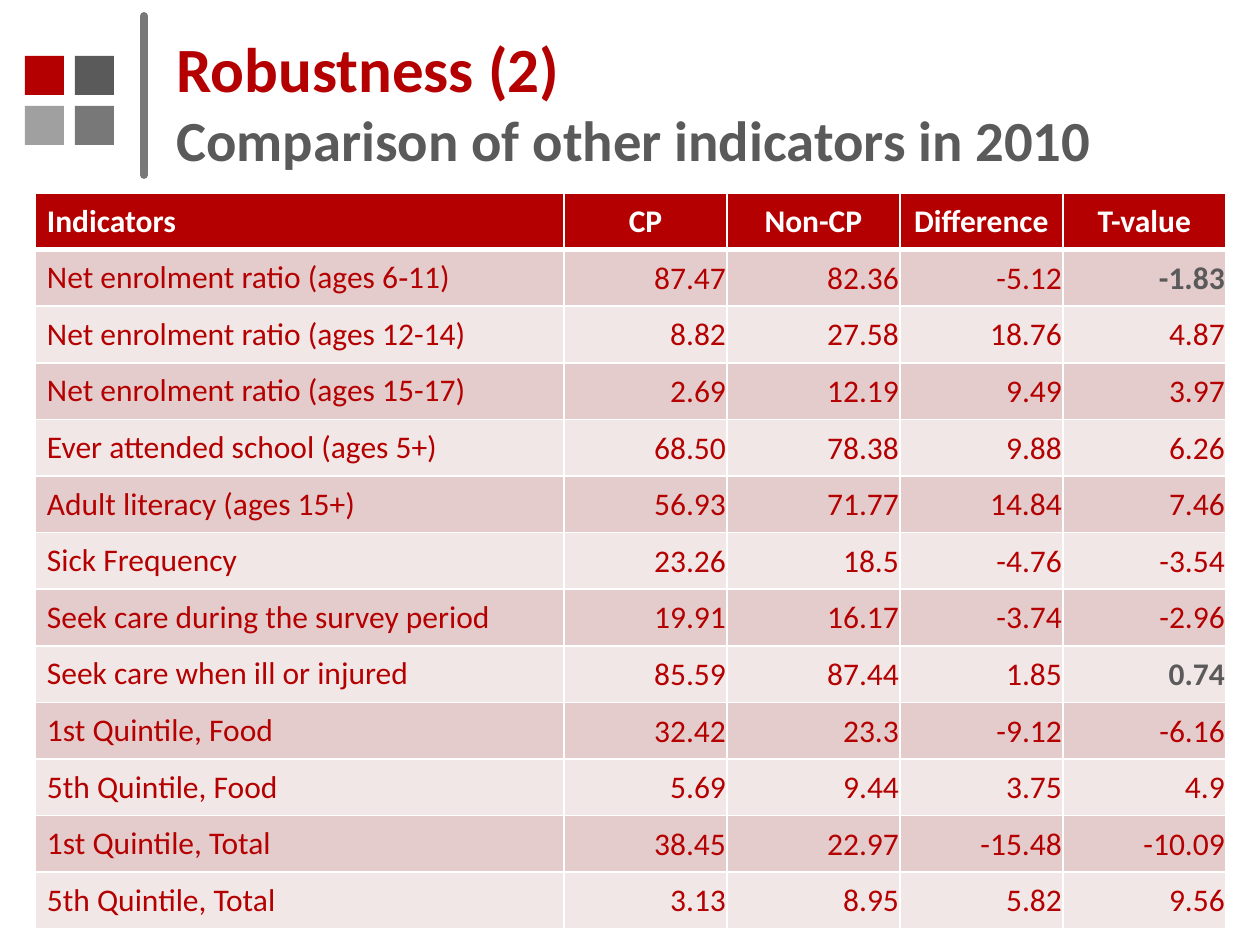
from dataclasses import dataclass

from lxml.etree import SubElement
from pptx import Presentation
from pptx.dml.color import RGBColor
from pptx.enum.shapes import MSO_CONNECTOR as Connector
from pptx.enum.shapes import MSO_SHAPE as Shape
from pptx.enum.text import MSO_ANCHOR as Anchor
from pptx.enum.text import PP_ALIGN as Align
from pptx.oxml import parse_xml
from pptx.oxml.ns import nsdecls, qn
from pptx.util import Pt


@dataclass(frozen=True)
class Theme:
    font: str = "Calibri"
    red: str = "B40000"
    dark: str = "5A5A5A"
    medium: str = "787878"
    light: str = "A0A0A0"
    white: str = "FFFFFF"
    bands: tuple = ("E5CCCC", "F2E7E7")
    title_size: float = 36
    subtitle_size: float = 32.4
    table_size: float = 18
    rule_width: float = 4.5
    border: int = 1
    header_border: int = 3


THEME = Theme()
PX_PER_INCH = 126

COLUMN_WIDTHS = (529, 163, 173, 163, 163)
TABLE_HEIGHT = 736
HEADER = ("Indicators", "CP", "Non-CP", "Difference", "T-value")
INDICATORS = (
    ("Net enrolment ratio (ages 6‐11)", "87.47", "82.36", "-5.12", "-1.83"),
    ("Net enrolment ratio (ages 12-14)", "8.82", "27.58", "18.76", "4.87"),
    ("Net enrolment ratio (ages 15-17)", "2.69", "12.19", "9.49", "3.97"),
    ("Ever attended school (ages 5+)", "68.50", "78.38", "9.88", "6.26"),
    ("Adult literacy (ages 15+)", "56.93", "71.77", "14.84", "7.46"),
    ("Sick Frequency", "23.26", "18.5", "-4.76", "-3.54"),
    ("Seek care during the survey period", "19.91", "16.17", "-3.74", "-2.96"),
    ("Seek care when ill or injured", "85.59", "87.44", "1.85", "0.74"),
    ("1st Quintile, Food", "32.42", "23.3", "-9.12", "-6.16"),
    ("5th Quintile, Food", "5.69", "9.44", "3.75", "4.9"),
    ("1st Quintile, Total", "38.45", "22.97", "-15.48", "-10.09"),
    ("5th Quintile, Total", "3.13", "8.95", "5.82", "9.56"),
)
INSIGNIFICANT = ("-1.83", "0.74")


def px(length):
    return round(length * 914400 / PX_PER_INCH)


def paint(fill, color):
    fill.solid()
    fill.fore_color.rgb = RGBColor.from_string(color)


def style_span(span, size, color, bold):
    span.font.name = THEME.font
    span.font.size = Pt(size)
    span.font.bold = bold
    span.font.color.rgb = RGBColor.from_string(color)


def add_square(page, left, top, color, side=39):
    square = page.shapes.add_shape(
        Shape.RECTANGLE, px(left), px(top), px(side), px(side))
    square.shadow.inherit = False
    paint(square.fill, color)
    square.line.fill.background()


def add_rule(page, x, top, bottom):
    rule = page.shapes.add_connector(
        Connector.STRAIGHT, px(x), px(top), px(x), px(bottom))
    rule.line.width = Pt(THEME.rule_width)
    rule.line.color.rgb = RGBColor.from_string(THEME.medium)
    properties = rule.element.spPr
    properties.find(qn("a:ln")).set("cap", "rnd")
    SubElement(properties, qn("a:effectLst"))


def add_title(page, title, subtitle):
    box = page.shapes.add_textbox(px(164), px(37), px(1003), px(129))
    frame = box.text_frame
    frame.word_wrap = True
    frame.vertical_anchor = Anchor.MIDDLE
    para = frame.paragraphs[0]
    para.text = f"{title}\v{subtitle}"
    first, second = para.runs
    style_span(first, THEME.title_size, THEME.red, True)
    style_span(second, THEME.subtitle_size, THEME.dark, True)


def set_borders(cell, top, bottom):
    widths = {"L": THEME.border, "R": THEME.border, "T": top, "B": bottom}
    properties = cell._tc.get_or_add_tcPr()
    for index, (side, width) in enumerate(widths.items()):
        properties.insert(index, parse_xml(
            f'<a:ln{side} {nsdecls("a")} w="{Pt(width)}"><a:solidFill>'
            f'<a:srgbClr val="{THEME.white}"/></a:solidFill></a:ln{side}>'))


def fill_cell(cell, text, row, column):
    is_header, is_label = row == 0, column == 0
    strong = text in INSIGNIFICANT
    side_margin = 12 if is_header or is_label else 1
    cell.margin_left = cell.margin_right = px(side_margin)
    cell.margin_top = px(0 if is_header or is_label else 1)
    cell.margin_bottom = 0
    cell.vertical_anchor = Anchor.MIDDLE

    # Text: labels left, header centred, figures right
    para = cell.text_frame.paragraphs[0]
    para.text = text
    if is_label:
        para.alignment = Align.LEFT
    else:
        para.alignment = Align.CENTER if is_header else Align.RIGHT
    color = THEME.white if is_header else THEME.dark if strong else THEME.red
    style_span(para.runs[0], THEME.table_size, color, is_header or strong)

    # Banding and borders, heavier under the header
    paint(cell.fill, THEME.red if is_header else THEME.bands[(row - 1) % 2])
    set_borders(cell,
                THEME.header_border if row == 1 else THEME.border,
                THEME.header_border if is_header else THEME.border)


def add_indicator_table(page):
    rows = (HEADER,) + INDICATORS
    table = page.shapes.add_table(
        len(rows), len(HEADER), px(35), px(193),
        px(sum(COLUMN_WIDTHS)), px(TABLE_HEIGHT)).table
    table.horz_banding = False
    for column, width in zip(table.columns, COLUMN_WIDTHS):
        column.width = px(width)
    for row, texts in enumerate(rows):
        table.rows[row].height = px(TABLE_HEIGHT) // len(rows)
        for column, text in enumerate(texts):
            fill_cell(table.cell(row, column), text, row, column)


def main():
    deck = Presentation()
    deck.slide_width, deck.slide_height = px(1260), px(945)
    page = deck.slides.add_slide(deck.slide_layouts[6])

    # Emblem of four squares beside the vertical rule
    colors = (THEME.red, THEME.dark, THEME.light, THEME.medium)
    for index, color in enumerate(colors):
        row, column = divmod(index, 2)
        add_square(page, 25 + 50 * column, 56 + 50 * row, color)
    add_rule(page, 144, 16, 175)

    # Heading and table
    add_title(page, "Robustness (2)", "Comparison of other indicators in 2010")
    add_indicator_table(page)
    deck.save("out.pptx")


if __name__ == "__main__":
    main()
